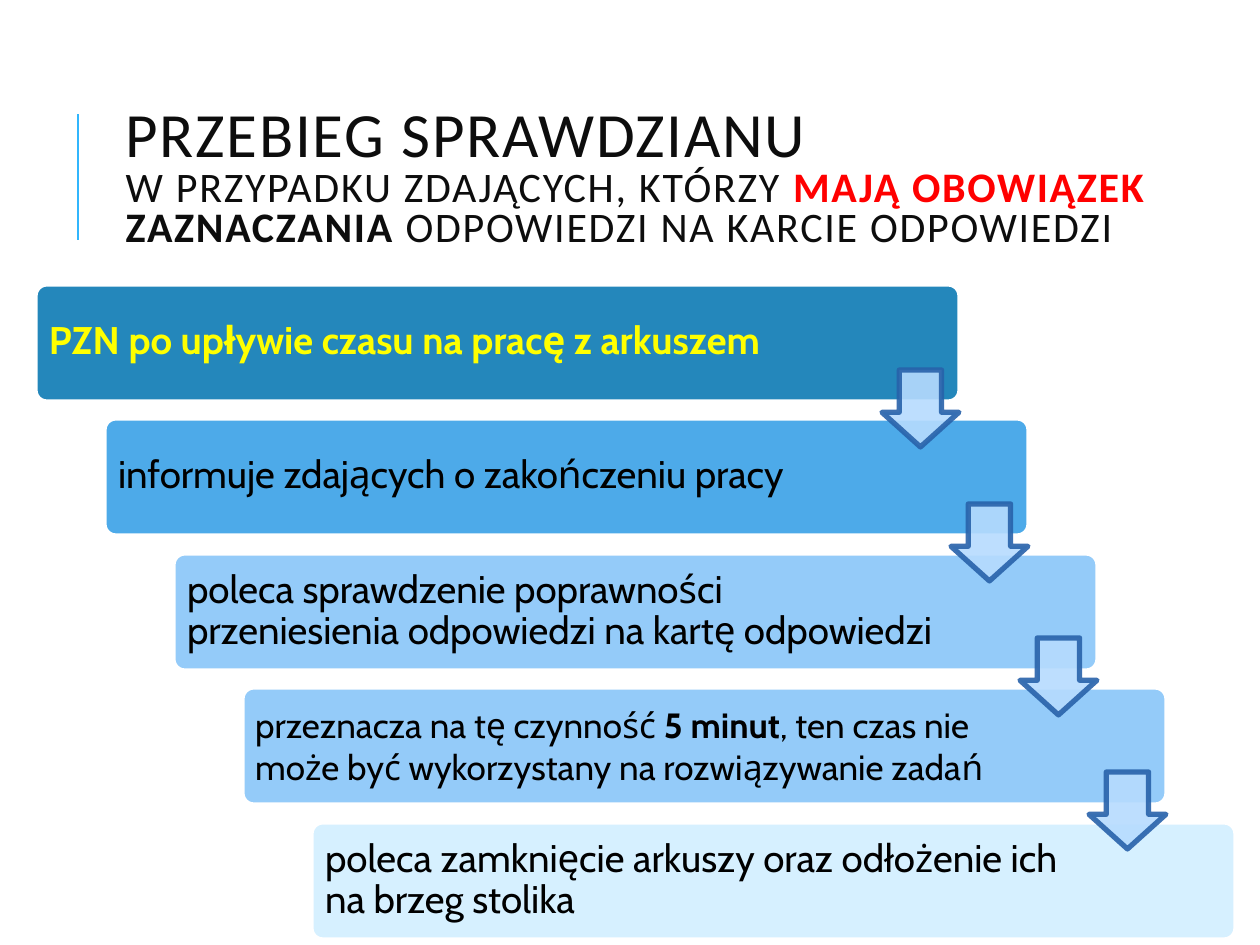
from dataclasses import dataclass
from lxml.etree import SubElement as Sub
from pptx import Presentation
from pptx.dml.color import RGBColor as Rgb
from pptx.enum.shapes import MSO_CONNECTOR as Link, MSO_SHAPE as Kind
from pptx.enum.text import MSO_ANCHOR as Anchor, MSO_AUTO_SIZE as Fit, PP_ALIGN as Align
from pptx.oxml.ns import qn
from pptx.util import Emu, Pt


@dataclass(frozen=True)
class Theme:
    head: str = "Calibri"
    body: str = "Cabin"
    big: int = 36
    sub: int = 24
    text: int = 22
    small: int = 20
    ink: str = "0D0D0D"
    black: str = "000000"
    red: str = "FF0000"
    gold: str = "FFFF00"
    white: str = "FFFFFF"
    rule: str = "31B6FD"
    deep: str = "2487BB"
    mid: str = "4DAAE9"
    light: str = "94CBF9"
    pale: str = "D6F0FF"
    arrow: str = "B6DBFE"
    edge: str = "2862AA"


def px(*nums):
    return [Emu(round(num * 914400 / 126)) for num in nums]


def put(para, text, face, size, tint, bold=False):
    run = para.add_run()
    run.text = text
    font = run.font
    font.name, font.size, font.bold = face, Pt(size), bold
    font.color.rgb = Rgb.from_string(tint)
    return run


look = Theme()
deck = Presentation()
deck.slide_width, deck.slide_height = px(1260, 945)
slide = deck.slides.add_slide(deck.slide_layouts[5])
shapes = slide.shapes

rule = shapes.add_connector(Link.STRAIGHT, *px(78, 240, 78, 114))
rule.line.color.rgb = Rgb.from_string(look.rule)
rule.line.width = Pt(1.5)
Sub(rule._element.spPr, qn("a:effectLst"))

title = shapes.title
title.left, title.top, title.width, title.height = px(113, 76, 1120, 208)
frame = title.text_frame
frame.word_wrap = True
frame.auto_size = Fit.NONE
frame.vertical_anchor = Anchor.MIDDLE
para = frame.paragraphs[0]
para.alignment = Align.LEFT
para.line_spacing = 0.8
lines = [
    (look.big, [("PRZEBIEG SPRAWDZIANU", look.ink, False)]),
    (look.sub, [("W PRZYPADKU ZDAJĄCYCH, KTÓRZY ", look.ink, False),
                ("MAJĄ OBOWIĄZEK", look.red, True)]),
    (look.sub, [("ZAZNACZANIA ", look.ink, True),
                ("ODPOWIEDZI NA KARCIE ODPOWIEDZI", look.ink, False)]),
]
for row, (size, parts) in enumerate(lines):
    if row:
        para.add_line_break()
        Sub(para._p[-1], qn("a:rPr"), sz=str(lines[row - 1][0] * 100))
    for text, tint, bold in parts:
        run = put(para, text, look.head, size, tint, bold)
        run._r.get_or_add_rPr().set("spc", "100")

steps = [
    (look.deep, look.gold, look.text, 11, 0.9,
     [[("PZN po upływie czasu na pracę z arkuszem", True)]]),
    (look.mid, look.black, look.text, 11, 0.9,
     [[("informuje zdających o zakończeniu pracy", False)]]),
    (look.light, look.black, look.text, 11, 0.9,
     [[("poleca sprawdzenie poprawności ", False)],
      [("przeniesienia odpowiedzi na kartę odpowiedzi", False)]]),
    (look.light, look.black, look.small, 10, 1.0,
     [[("przeznacza na tę czynność ", False), ("5 minut", True),
       (", ten czas nie może być wykorzystany na rozwiązywanie zadań", False)]]),
    (look.pale, look.black, look.text, 11, 0.9,
     [[("poleca zamknięcie arkuszy oraz odłożenie ich na brzeg stolika", False)]]),
]
for row, (fill, tint, size, inset, space, lines) in enumerate(steps):
    left, top = 35 + 69 * row, 284 + 269 * row // 2
    bar = shapes.add_shape(Kind.ROUNDED_RECTANGLE, *px(left, top, 925, 118))
    bar.adjustments[0] = 0.1
    bar.shadow.inherit = False
    bar.fill.solid()
    bar.fill.fore_color.rgb = Rgb.from_string(fill)
    bar.line.color.rgb = Rgb.from_string(look.white)
    bar.line.width = Pt(3)

    wide = 772 if row else 784
    box = shapes.add_textbox(*px(left + 3, top + 3, wide, 111))
    frame = box.text_frame
    frame.word_wrap = True
    frame.vertical_anchor = Anchor.MIDDLE
    (frame.margin_left, frame.margin_top,
     frame.margin_right, frame.margin_bottom) = px(*[inset] * 4)
    para = frame.paragraphs[0]
    para.line_spacing = space
    for spot, parts in enumerate(lines):
        if spot:
            para.add_line_break()
            Sub(para._p[-1], qn("a:rPr"), sz=str(size * 100))
        for text, bold in parts:
            put(para, text, look.body, size, tint, bold)

for row in range(len(steps) - 1):
    arrow = shapes.add_shape(
        Kind.DOWN_ARROW, *px(882 + 69 * row, 370 + 134 * row, 77, 77))
    arrow.adjustments[0], arrow.adjustments[1] = 0.55, 0.45
    arrow.shadow.inherit = False
    arrow.fill.solid()
    arrow.fill.fore_color.rgb = Rgb.from_string(look.arrow)
    arrow.line.color.rgb = Rgb.from_string(look.edge)
    arrow.line.width = Pt(3)
    for tone in arrow._element.spPr.iter(qn("a:srgbClr")):
        Sub(tone, qn("a:alpha"), val="90000")

deck.save("out.pptx")
